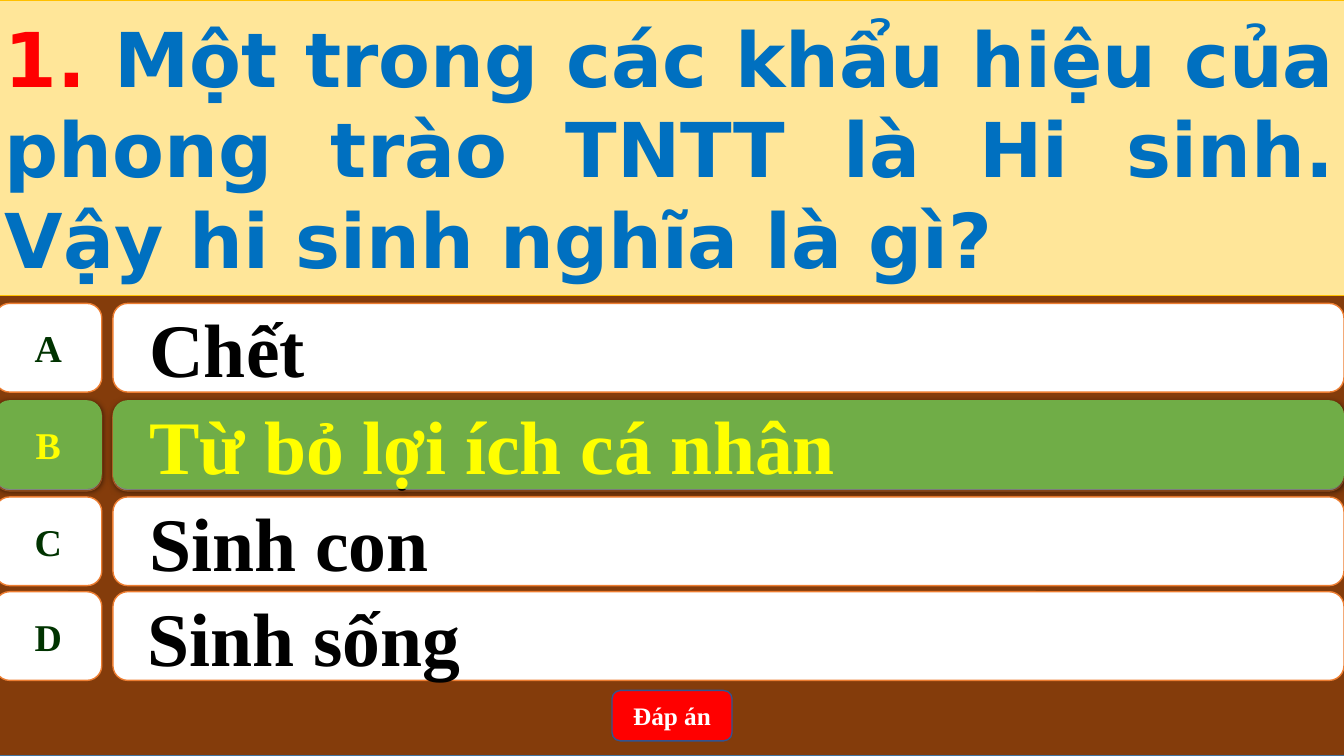
from lxml import etree
from pptx import Presentation
from pptx.dml.color import RGBColor
from pptx.enum.shapes import MSO_SHAPE as Kind
from pptx.enum.text import MSO_ANCHOR as Anchor, PP_ALIGN as Align
from pptx.oxml import parse_xml
from pptx.oxml.ns import nsdecls, qn
from pptx.util import Pt

PX = 9144  # 100 px to the inch
SERIF = "Times New Roman"
SANS = "DejaVu Sans"
PLAIN = ("FFFFFF", "ED7D31", "003300", "000000")
RIGHT = ("70AD47", None, "FFFF00", "FFFF00")


def px(n):
    return n * PX


def rgb(code):
    return RGBColor.from_string(code)


def add_box(shapes, kind, box, fill, line=None, width=1):
    shape = shapes.add_shape(kind, *map(px, box))
    shape.shadow.inherit = False
    shape.fill.solid()
    shape.fill.fore_color.rgb = rgb(fill)
    if line:
        shape.line.color.rgb = rgb(line)
        shape.line.width = Pt(width)
    else:
        shape.line.fill.background()
    return shape


def set_font(font, name, size, color):
    font.name, font.size, font.bold = name, Pt(size), True
    font.color.rgb = rgb(color)


def write(shape, text, size, color, align=Align.CENTER, wrap=True):
    frame = shape.text_frame
    frame.word_wrap = wrap
    frame.vertical_anchor = Anchor.MIDDLE
    para = frame.paragraphs[0]
    para.text = text
    para.alignment = align
    set_font(para.font, SERIF, size, color)
    return para


def indent(para, left, first):
    props = para._p.get_or_add_pPr()
    props.set("marL", str(px(left)))
    props.set("indent", str(px(first)))


def cast(shape):
    """Give the shape a soft shadow straight below it."""
    effects = shape._element.spPr.find(qn("a:effectLst"))
    effects.append(parse_xml(
        f'<a:outerShdw {nsdecls("a")} blurRad="{Pt(4.5)}" dist="{Pt(1.5)}" '
        'dir="5400000" algn="ctr" rotWithShape="0">'
        '<a:srgbClr val="000000"><a:alpha val="63000"/></a:srgbClr>'
        '</a:outerShdw>'))


def add_row(slide, top, key, text, style, level=1, left=50, first=-28):
    """Add one answer: a letter tile and a wide bar."""
    fill, line, ink, tone = style
    shapes = slide.shapes.add_group_shape().shapes
    tile = add_box(shapes, Kind.FLOWCHART_ALTERNATE_PROCESS,
                   (-5, top, 106, 88), fill, line)
    write(tile, key, 27, ink, wrap=False)
    bar = add_box(shapes, Kind.ROUNDED_RECTANGLE,
                  (112, top, 1221, 88), fill, line)
    para = write(bar, text, 54, tone, Align.LEFT)
    para.level = level
    indent(para, left, first)
    if style is RIGHT:
        cast(tile)
        cast(bar)


def add_query(slide, number, text):
    panel = add_box(slide.shapes, Kind.RECTANGLE, (-5, 0, 1339, 293),
                    "FFE699", "FFC000", 0.5)
    panel.text_frame.word_wrap = True
    panel.text_frame.vertical_anchor = Anchor.MIDDLE
    para = panel.text_frame.paragraphs[0]
    para.alignment = Align.JUSTIFY
    for part, color in ((number, "FF0000"), (text, "0070C0")):
        run = para.add_run()
        run.text = part
        set_font(run.font, SANS, 54, color)


def main():
    deck = Presentation()
    deck.slide_width, deck.slide_height = px(1333), px(750)
    slide = deck.slides.add_slide(deck.slide_layouts[6])

    add_box(slide.shapes, Kind.RECTANGLE, (-5, 0, 1339, 750),
            "843C0B", "43739E")
    add_query(slide, "1. ", "Một trong các khẩu hiệu của phong trào TNTT "
              "là Hi sinh. Vậy hi sinh nghĩa là gì?")

    gain = "Từ bỏ lợi ích cá nhân"
    add_row(slide, 301, "A", "Chết", PLAIN)
    add_row(slide, 399, "B", gain, PLAIN)
    add_row(slide, 493, "C", "Sinh con", PLAIN)
    add_row(slide, 587, "D", "Sinh sống", PLAIN, 0, 20, 0)
    add_row(slide, 397, "B", gain, RIGHT)

    button = add_box(slide.shapes, Kind.ROUNDED_RECTANGLE,
                     (607, 685, 119, 50), "FF0000", "325491")
    write(button, "Đáp án", 18, "FFFFFF")
    deck.save("out.pptx")


if __name__ == "__main__":
    main()
